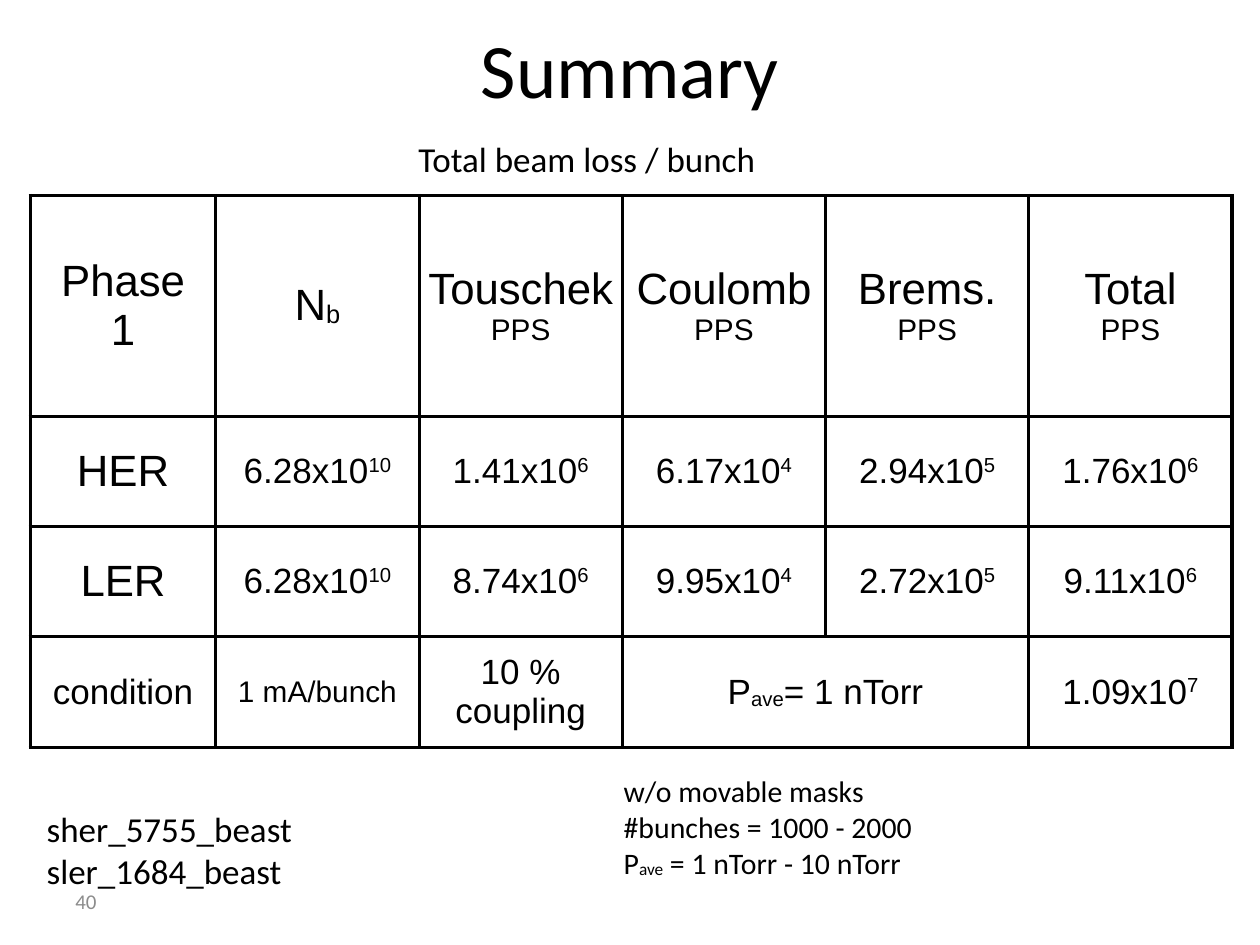
import pptx
import pptx.dml.color
import pptx.enum.text
import pptx.oxml
import pptx.oxml.ns
import pptx.util

BLACK = pptx.dml.color.RGBColor(0x00, 0x00, 0x00)
GREY = pptx.dml.color.RGBColor(0x8C, 0x8C, 0x8C)
WIDTH, HEIGHT = pptx.util.Inches(10), pptx.util.Inches(7.5)
COLUMN, ROW = WIDTH / 100, HEIGHT / 75
MIDDLE = pptx.enum.text.MSO_ANCHOR.MIDDLE
LEFT, CENTER = pptx.enum.text.PP_ALIGN.LEFT, pptx.enum.text.PP_ALIGN.CENTER
BORDER = pptx.util.Pt(2)
COLUMN_SHARES = [14.7] + [16.1] * 5
ROW_SHARES = [2, 1, 1, 1]
HEADINGS = ["Touschek", "Coulomb", "Brems.", "Total"]
LOSSES = {
    "HER": ["6.28x10|10", "1.41x10|6", "6.17x10|4", "2.94x10|5", "1.76x10|6"],
    "LER": ["6.28x10|10", "8.74x10|6", "9.95x10|4", "2.72x10|5", "9.11x10|6"],
}


def grid_box(left, top, width, height):
    """Turn grid columns and rows into a box of slide lengths."""
    return [round(n * unit) for n, unit in zip((left, top, width, height), (COLUMN, ROW) * 2)]


def write_lines(frame, lines, font_name, color, alignment):
    """Write (text, size) lines; every second part between bars is raised or lowered."""
    for index, (text, size) in enumerate(lines):
        paragraph = frame.add_paragraph() if index else frame.paragraphs[0]
        paragraph.alignment = alignment
        paragraph.font.name = font_name
        paragraph.font.size = pptx.util.Pt(size)
        paragraph.font.color.rgb = color
        for position, part in enumerate(text.split("|")):
            run = paragraph.add_run()
            run.text = part
            if position % 2:
                run.font._element.set("baseline", "32000" if part.isdigit() else "-6000")


def add_text(slide, box, lines, size, color=BLACK, alignment=LEFT, inset=0):
    """Add a middle-anchored text box with lines of one size."""
    frame = slide.shapes.add_textbox(*box).text_frame
    frame.word_wrap = True
    frame.vertical_anchor = MIDDLE
    frame.margin_left = frame.margin_right = pptx.util.Inches(inset)
    frame.margin_top = frame.margin_bottom = pptx.util.Inches(inset / 2)
    write_lines(frame, [(line, size) for line in lines], "Calibri", color, alignment)


def table_rows():
    """Return the table's cells, each a list of (text, size) lines."""
    header = [[("Phase", 25), ("1", 25)], [("N|b", 25)]]
    header += [[(heading, 25), ("PPS", 17)] for heading in HEADINGS]
    rings = [[[(ring, 25)]] + [[(value, 20)] for value in values] for ring, values in LOSSES.items()]
    condition = [[("condition", 20)], [("1 mA/bunch", 17)], [("10 %", 20), ("coupling", 20)],
                 [("P|ave|= 1 nTorr", 20)], [], [("1.09x10|7", 20)]]
    return [header, *rings, condition]


def outline_cell(cell):
    """Draw a black line on all four sides of a cell."""
    properties = cell._tc.get_or_add_tcPr()
    namespace = pptx.oxml.ns.nsdecls("a")
    for index, side in enumerate(("lnL", "lnR", "lnT", "lnB")):
        properties.insert(index, pptx.oxml.parse_xml(
            f'<a:{side} {namespace} w="{BORDER}"><a:solidFill>'
            f'<a:srgbClr val="{BLACK}"/></a:solidFill></a:{side}>'))


def add_loss_table(slide, box):
    """Add the beam loss table, dividing the box by the column and row shares."""
    rows = table_rows()
    table = slide.shapes.add_table(len(rows), len(COLUMN_SHARES), *box).table
    table.first_row = table.horz_banding = False
    for column, share in zip(table.columns, COLUMN_SHARES):
        column.width = round(box[2] * share / sum(COLUMN_SHARES))
    for row, share in zip(table.rows, ROW_SHARES):
        row.height = round(box[3] * share / sum(ROW_SHARES))
    table.cell(3, 3).merge(table.cell(3, 4))
    for row_index, row in enumerate(rows):
        for column_index, lines in enumerate(row):
            cell = table.cell(row_index, column_index)
            cell.fill.background()
            cell.vertical_anchor = MIDDLE
            cell.margin_left = cell.margin_right = pptx.util.Inches(0.04)
            cell.margin_top = cell.margin_bottom = pptx.util.Inches(0.04)
            outline_cell(cell)
            write_lines(cell.text_frame, lines, "Arial", BLACK, CENTER)


def build_summary(presentation):
    """Add the summary slide."""
    slide = presentation.slides.add_slide(presentation.slide_layouts[6])
    add_text(slide, grid_box(5, 69.5, 23.3, 4), ["40"], 12, GREY, inset=0.1)
    add_text(slide, grid_box(5, -0.9, 90, 12.5), ["Summary"], 44, alignment=CENTER, inset=0.1)
    add_loss_table(slide, grid_box(2.4, 15.5, 95.4, 43.8))
    add_text(slide, grid_box(49.5, 60.5, 41.6, 10.2),
             ["w/o movable masks", "#bunches = 1000 - 2000", "P|ave| = 1 nTorr - 10 nTorr"], 17)
    add_text(slide, grid_box(33.2, 10.9, 27.2, 3.4), ["Total beam loss / bunch"], 20)
    add_text(slide, grid_box(3.7, 63.6, 32.7, 7.6), ["sher_5755_beast", "sler_1684_beast"], 20)


def main():
    """Build and save the presentation."""
    presentation = pptx.Presentation()
    presentation.slide_width, presentation.slide_height = WIDTH, HEIGHT
    build_summary(presentation)
    presentation.save("out.pptx")


if __name__ == "__main__":
    main()
